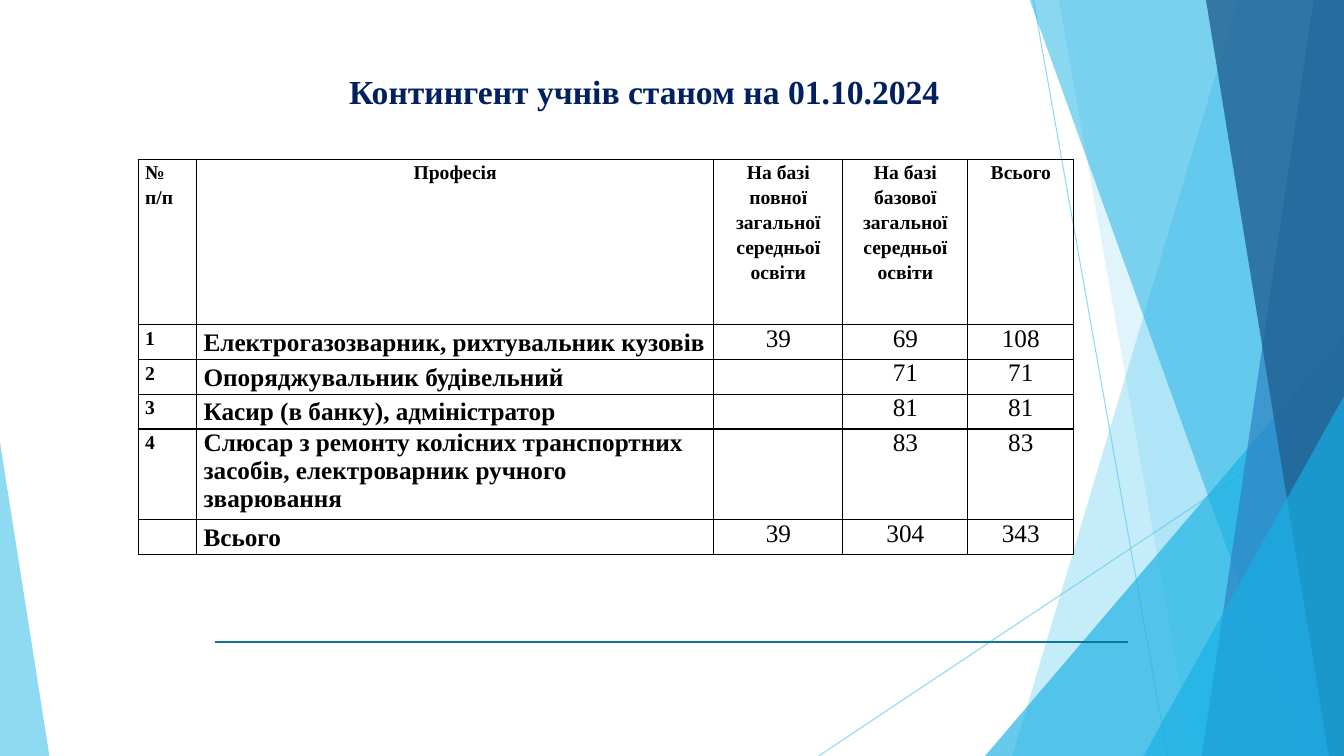
from pptx import Presentation
from pptx.dml.color import RGBColor
from pptx.enum.shapes import MSO_CONNECTOR as Connector, MSO_SHAPE as Preset
from pptx.enum.text import MSO_ANCHOR as Anchor, PP_ALIGN as Align
from pptx.oxml import parse_xml
from pptx.oxml.ns import nsdecls, qn
from pptx.util import Inches, Pt
from lxml import etree

COLORS = {
    "sky": "5FCBEF",
    "cyan": "17B0E4",
    "blue": "2E83C3",
    "navy": "226292",
    "rule": "0F7698",
    "title": "002060",
    "ink": "000000",
}
WIDTH, HEIGHT = 13.33, 7.5
FACET_TOP = -0.01

# kind, geometry, colour, opacity; listed from back to front.
# A facet is (top x, bottom x); a triangle is (left, top, width, apex).
BACKDROP = [
    ("facet", (12.28, 10.04), "sky", 36),
    ("facet", (10.5, 11.83), "sky", 20),
    ("triangle", (9.77, 3.33, 3.56, 1), "cyan", 66),
    ("facet", (10.21, 12.91), "cyan", 50),
    ("facet", (13.03, 11.92), "blue", 70),
    ("facet", (11.96, 13.18), "navy", 80),
    ("triangle", (11.34, 3.93, 1.99, 1), "cyan", 66),
    ("triangle", (0, 4.39, 0.49, 0), "sky", 70),
]

COLUMN_WIDTHS = [0.58, 5.13, 1.28, 1.24, 1.05]
ROW_HEIGHTS = [1.64, 0.29, 0.34, 0.29, 0.37, 0.29]
ROWS = [
    ["№\nп/п", "Професія", "На базі повної загальної середньої освіти",
     "На базі базової загальної середньої освіти", "Всього"],
    ["1", "Електрогазозварник, рихтувальник кузовів", "39", "69", "108"],
    ["2", "Опоряджувальник будівельний", "", "71", "71"],
    ["3", "Касир (в банку), адміністратор", "", "81", "81"],
    ["4", "Слюсар з ремонту колісних транспортних засобів, "
          "електроварник ручного зварювання", "", "83", "83"],
    ["", "Всього", "39", "304", "343"],
]
LONG_ROW = 4


def set_all(target, values):
    for name, value in values.items():
        setattr(target, name, value)


def set_opacity(fill_parent, percent):
    color = next(fill_parent.iter(qn("a:srgbClr")))
    etree.SubElement(color, qn("a:alpha")).set("val", str(percent * 1000))


class SlideBuilder:
    font_name = "Times New Roman"

    def __init__(self, page):
        self.page = page
        self.shapes = page.shapes

    def color(self, name):
        return RGBColor.from_string(COLORS[name])

    def line(self, start, end, color, width, opacity=100):
        points = [Inches(value) for value in (*start, *end)]
        line = self.shapes.add_connector(Connector.STRAIGHT, *points)
        line.line.color.rgb = self.color(color)
        line.line.width = Pt(width)
        properties = line._element.spPr
        if opacity < 100:
            set_opacity(properties, opacity)
        etree.SubElement(properties, qn("a:effectLst"))

    def paint(self, shape, color, opacity):
        shape.shadow.inherit = False
        shape.fill.solid()
        shape.fill.fore_color.rgb = self.color(color)
        shape.line.fill.background()
        set_opacity(shape._element.spPr, opacity)

    def facet(self, geometry, color, opacity):
        """Fill from a slanted left edge to the right side of the slide."""
        top_x, bottom_x = geometry
        outline = self.shapes.build_freeform(Inches(top_x), Inches(FACET_TOP))
        corners = [(WIDTH, FACET_TOP), (WIDTH, HEIGHT), (bottom_x, HEIGHT)]
        outline.add_line_segments(
            [(Inches(x), Inches(y)) for x, y in corners], close=True)
        self.paint(outline.convert_to_shape(), color, opacity)

    def triangle(self, geometry, color, opacity):
        """Stand a right triangle on the bottom of the slide."""
        left, top, width, apex = geometry
        box = [Inches(value) for value in (left, top, width, HEIGHT - top)]
        shape = self.shapes.add_shape(Preset.ISOSCELES_TRIANGLE, *box)
        shape.adjustments[0] = apex
        self.paint(shape, color, opacity)

    def add_span(self, para, text, size, color, bold):
        span = para.add_run()
        span.text = text
        set_all(span.font, {"name": self.font_name, "size": Pt(size), "bold": bold})
        span.font.color.rgb = self.color(color)

    def title(self, text, box):
        frame = self.shapes.add_textbox(*map(Inches, box)).text_frame
        set_all(frame, {"word_wrap": True, "vertical_anchor": Anchor.TOP,
                        "margin_top": Inches(0.04), "margin_bottom": 0})
        para = frame.paragraphs[0]
        para.alignment = Align.CENTER
        self.add_span(para, text, 24, "title", True)

    def cell(self, cell, text, size, bold, para_format):
        set_all(cell, {"margin_left": Inches(0.07), "margin_right": Inches(0.07),
                       "margin_top": 0, "margin_bottom": 0})
        cell.fill.background()
        properties = cell._tc.get_or_add_tcPr()
        for index, side in enumerate("LRTB"):
            properties.insert(index, parse_xml(
                f'<a:ln{side} {nsdecls("a")} w="12700"><a:solidFill>'
                f'<a:srgbClr val="{COLORS["ink"]}"/></a:solidFill></a:ln{side}>'))
        if not text:
            return
        frame = cell.text_frame
        for index, part in enumerate(text.split("\n")):
            para = frame.add_paragraph() if index else frame.paragraphs[0]
            set_all(para, para_format)
            self.add_span(para, part, size, "ink", bold)

    def table(self, left, top):
        size = (sum(COLUMN_WIDTHS), sum(ROW_HEIGHTS))
        table = self.shapes.add_table(
            len(ROWS), len(COLUMN_WIDTHS), *map(Inches, (left, top, *size))).table
        set_all(table, {"first_row": False, "horz_banding": False})
        for column, width in zip(table.columns, COLUMN_WIDTHS):
            column.width = Inches(width)
        for row, height in zip(table.rows, ROW_HEIGHTS):
            row.height = Inches(height)
        for r, texts in enumerate(ROWS):
            for c, text in enumerate(texts):
                header, number = r == 0, c > 1
                centered = number or (header and c == 1)
                spaced = header or not (number or (r == LONG_ROW and c == 1))
                para_format = {
                    "alignment": Align.CENTER if centered else Align.LEFT,
                    "line_spacing": 1.15 if spaced else 1.0,
                }
                self.cell(table.cell(r, c), text, 14 if header or c == 0 else 18,
                          header or not number, para_format)


def main():
    deck = Presentation()
    set_all(deck, {"slide_width": Inches(WIDTH), "slide_height": Inches(HEIGHT)})
    builder = SlideBuilder(deck.slides.add_slide(deck.slide_layouts[6]))

    builder.line((10.25, 0), (11.58, HEIGHT), "sky", 0.75, 70)
    builder.line((WIDTH, 4.03), (8.12, HEIGHT), "sky", 0.75, 70)
    draw = {"facet": builder.facet, "triangle": builder.triangle}
    for kind, geometry, color, opacity in BACKDROP:
        draw[kind](geometry, color, opacity)
    builder.line((2.13, 6.37), (11.19, 6.37), "rule", 1.5)
    builder.title("Контингент учнів станом на 01.10.2024", (2.14, 0.66, 8.5, 0.36))
    builder.table(1.37, 1.58)
    deck.save("out.pptx")


if __name__ == "__main__":
    main()
